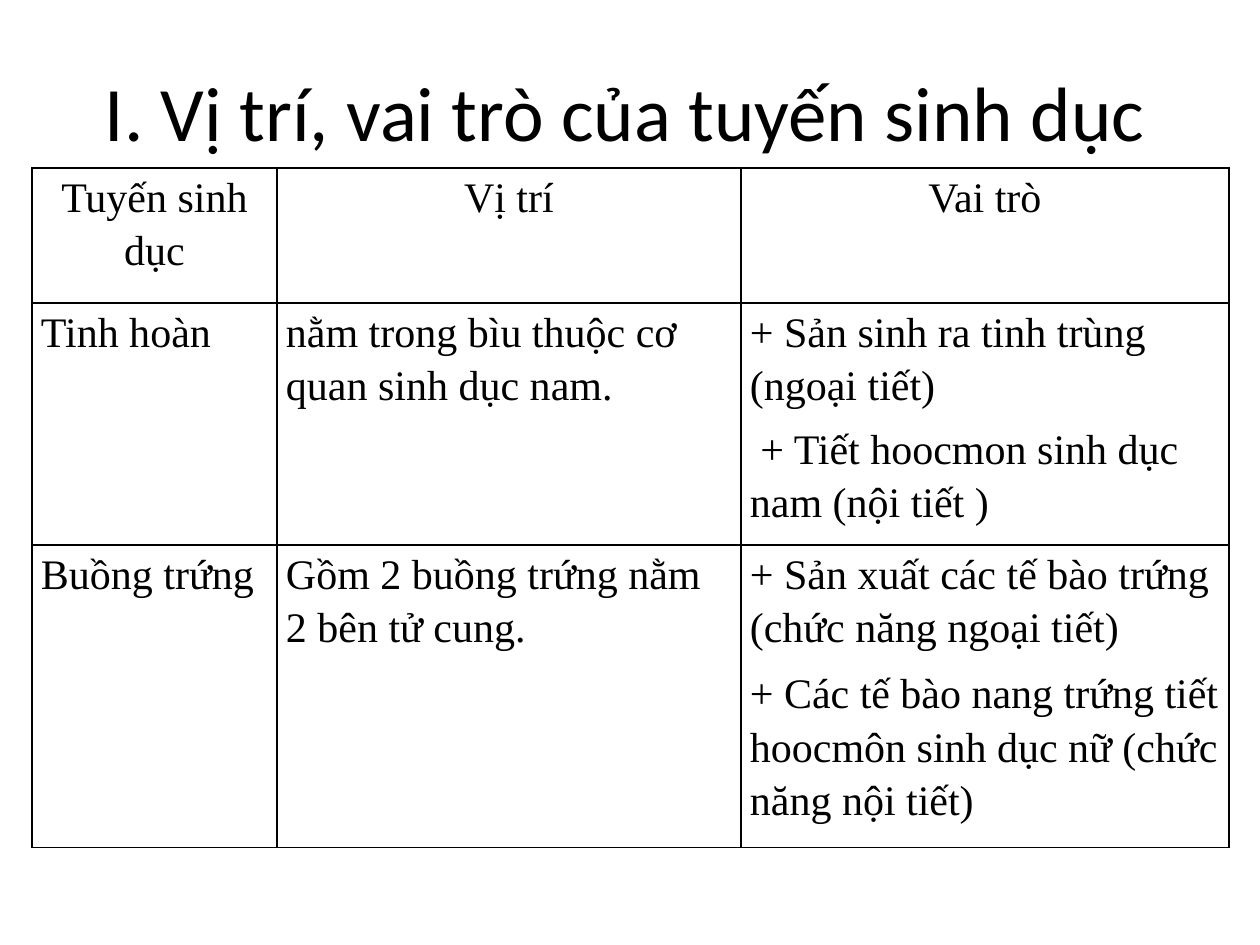
from lxml import etree
from pptx import Presentation
from pptx.dml.color import RGBColor
from pptx.enum.text import MSO_ANCHOR, PP_ALIGN
from pptx.oxml.ns import qn
from pptx.util import Pt

EMU_PER_PX = 914400 / 126
BLACK = RGBColor(0, 0, 0)
CENTER, LEFT = PP_ALIGN.CENTER, PP_ALIGN.LEFT
MIDDLE = MSO_ANCHOR.MIDDLE
COLUMN_WIDTHS = (245, 464, 488)
ROW_HEIGHTS = (135, 224, 286)
CELL_MARGIN = 9
ROWS = (
    (("Tuyến sinh dục",), ("Vị trí",), ("Vai trò",)),
    (("Tinh hoàn",),
     ("nằm trong bìu thuộc cơ quan sinh dục nam.",),
     ("+ Sản sinh ra tinh trùng (ngoại tiết)",
      " + Tiết hoocmon sinh dục nam (nội tiết )")),
    (("Buồng trứng",),
     ("Gồm 2 buồng trứng nằm 2 bên tử cung.",),
     ("+ Sản xuất các tế bào trứng (chức năng ngoại tiết)",
      "+ Các tế bào nang trứng tiết hoocmôn sinh dục nữ (chức năng nội tiết)")),
)


def px(length):
    """Turn pixels into EMU."""
    return round(length * EMU_PER_PX)


def add_run(paragraph, text, font_name, size):
    """Add one black run to a paragraph."""
    run = paragraph.add_run()
    run.text = text
    run.font.name = font_name
    run.font.size = Pt(size)
    run.font.bold = False
    run.font.color.rgb = BLACK


def add_title(slide, left, top, width, height):
    """Place the centred slide title in the given box."""
    box = slide.shapes.add_textbox(px(left), px(top), px(width), px(height))
    frame = box.text_frame
    frame.word_wrap = True
    frame.vertical_anchor = MIDDLE
    paragraph = frame.paragraphs[0]
    paragraph.alignment = CENTER
    add_run(paragraph, "I. Vị trí, vai trò của tuyến sinh dục", "Calibri", 44)


def draw_borders(cell):
    """Give a cell thin black lines on all sides and no fill."""
    properties = cell._tc.get_or_add_tcPr()
    for side in ("lnL", "lnR", "lnT", "lnB"):
        line = etree.SubElement(properties, qn(f"a:{side}"), w=str(Pt(1)))
        fill = etree.SubElement(line, qn("a:solidFill"))
        etree.SubElement(fill, qn("a:srgbClr"), val=str(BLACK))
    cell.fill.background()


def fill_cell(cell, texts, alignment, space_after):
    """Write the paragraphs of one table cell."""
    cell.margin_left = cell.margin_right = px(CELL_MARGIN)
    cell.margin_top = cell.margin_bottom = 0
    draw_borders(cell)
    frame = cell.text_frame
    for index, text in enumerate(texts):
        paragraph = frame.add_paragraph() if index else frame.paragraphs[0]
        paragraph.alignment = alignment
        paragraph.line_spacing = 1.15
        paragraph.space_before = Pt(4.8)
        paragraph.space_after = Pt(space_after)
        add_run(paragraph, text, "Times New Roman", 24)


def add_gland_table(slide, left, top):
    """Place the table of glands, positions and roles."""
    frame = slide.shapes.add_table(
        len(ROW_HEIGHTS), len(COLUMN_WIDTHS), px(left), px(top),
        px(sum(COLUMN_WIDTHS)), px(sum(ROW_HEIGHTS)))
    table = frame.table
    table.first_row = table.horz_banding = False
    for column, width in zip(table.columns, COLUMN_WIDTHS):
        column.width = px(width)
    for row_index, (row, height) in enumerate(zip(table.rows, ROW_HEIGHTS)):
        row.height = px(height)
        alignment = LEFT if row_index else CENTER
        for column_index, texts in enumerate(ROWS[row_index]):
            space_after = 1 if (row_index, column_index) == (1, 2) else 2.4
            fill_cell(row.cells[column_index], texts, alignment, space_after)


def main():
    """Build the slide and save it."""
    presentation = Presentation()
    presentation.slide_width = px(1260)
    presentation.slide_height = px(945)
    slide = presentation.slides.add_slide(presentation.slide_layouts[6])
    add_title(slide, 32, 32, 1187, 158)
    add_gland_table(slide, 32, 168)
    presentation.save("out.pptx")


if __name__ == "__main__":
    main()
